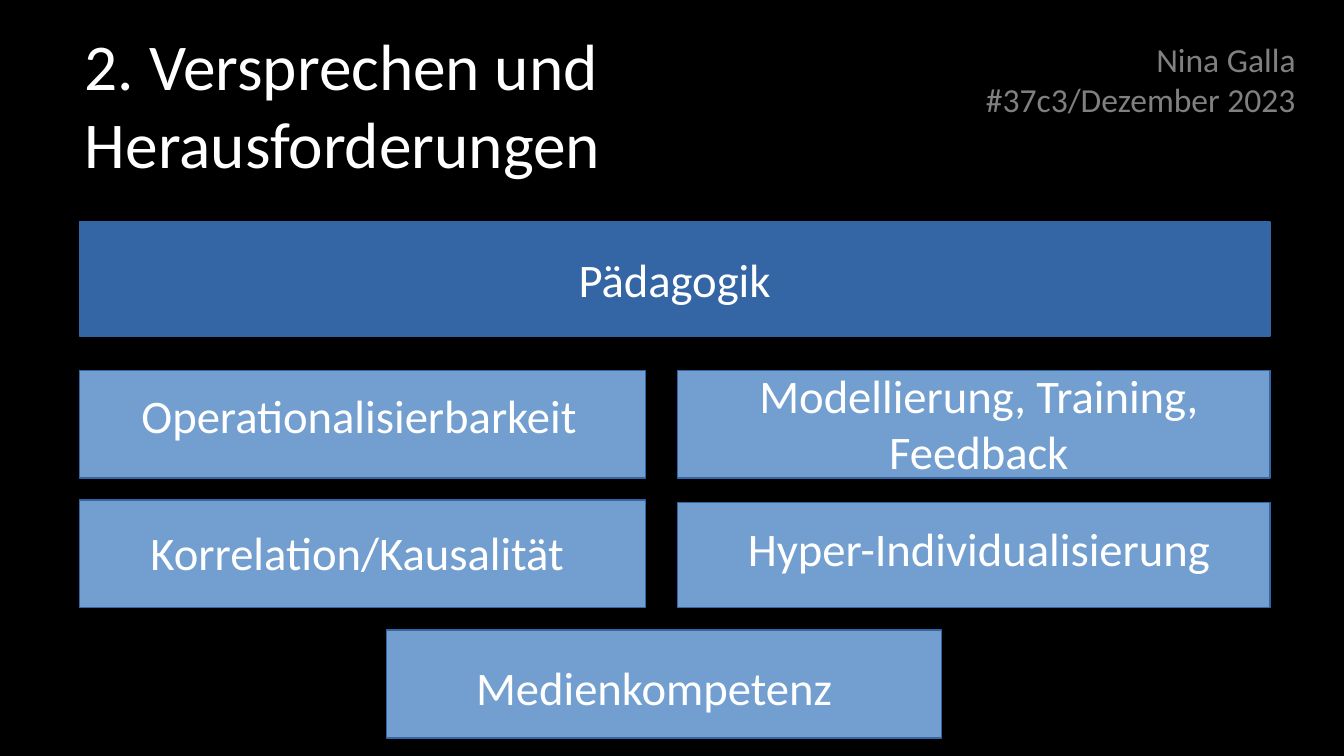
from pptx import Presentation
from pptx.dml.color import RGBColor
from pptx.enum import shapes, text
from pptx.util import Cm, Pt

COLORS = {
    "background": "000000",
    "text": "FFFFFF",
    "byline": "808080",
    "banner": "3465A4",
    "card": "729FCF",
    "outline": "3465A4",
}
FONT = "Calibri"
LABEL_SIZE = 25

TITLE = "2. Versprechen und\vHerausforderungen"
BYLINE = "Nina Galla\n#37c3/Dezember 2023"
BANNER = "Pädagogik"

# Lengths in cm: left, top, width, height
TITLE_AREA = (1.35, 0.43, 22.28, 3.05)
BYLINE_AREA = (12.04, 0.61, 12.7, 1.32)
LEFT, RIGHT_COLUMN, RIGHT_EDGE = 1.5, 12.8, 24
LEFT_WIDTH, RIGHT_WIDTH = 10.7, RIGHT_EDGE - RIGHT_COLUMN
CARD_HEIGHT = 2.04
ROW_TOPS = (7, 9.45, 11.91)
BANNER_AREA = (LEFT, 4.2, RIGHT_EDGE - LEFT, 2.15)

# Label, card area, label area
CARDS = [
    ("Operationalisierbarkeit",
     (LEFT, ROW_TOPS[0], LEFT_WIDTH, CARD_HEIGHT), (2.06, 7.19, 9.45, 2.62)),
    ("Modellierung, Training, Feedback",
     (RIGHT_COLUMN, ROW_TOPS[0], RIGHT_WIDTH, CARD_HEIGHT), (13, 6.81, 11, 1.8)),
    ("Korrelation/Kausalität",
     (LEFT, ROW_TOPS[1], LEFT_WIDTH, CARD_HEIGHT), (1.5, 9.78, 10.5, 1.8)),
    ("Hyper-Individualisierung",
     (RIGHT_COLUMN, 9.5, RIGHT_WIDTH, 1.98), (13, 9.7, 11, 1)),
    ("Medienkompetenz",
     (7.3, ROW_TOPS[2], 10.5, CARD_HEIGHT), (7.11, 12.32, 10.5, 1.8)),
]


def rgb(name):
    return RGBColor.from_string(COLORS[name])


def lengths(area):
    return [Cm(value) for value in area]


def write(box, words, size, align, color="text", anchor=text.MSO_ANCHOR.TOP):
    frame = box.text_frame
    frame.text = words
    frame.word_wrap = True
    frame.auto_size = text.MSO_AUTO_SIZE.NONE
    frame.vertical_anchor = anchor
    for para in frame.paragraphs:
        para.alignment = align
        for span in para.runs:
            span.font.name = FONT
            span.font.size = Pt(size)
            span.font.color.rgb = rgb(color)


def add_rectangle(page, area, fill):
    box = page.shapes.add_shape(shapes.MSO_SHAPE.RECTANGLE, *lengths(area))
    box.shadow.inherit = False
    box.fill.solid()
    box.fill.fore_color.rgb = rgb(fill)
    box.line.color.rgb = rgb("outline")
    box.line.width = Pt(0)
    return box


def main():
    deck = Presentation()
    deck.slide_width, deck.slide_height = Cm(25.4), Cm(14.29)
    page = deck.slides.add_slide(deck.slide_layouts.get_by_name("Title Only"))
    page.background.fill.solid()
    page.background.fill.fore_color.rgb = rgb("background")

    title = page.shapes.title
    title.left, title.top, title.width, title.height = lengths(TITLE_AREA)
    write(title, TITLE, 35, text.PP_ALIGN.LEFT, anchor=text.MSO_ANCHOR.MIDDLE)

    banner = add_rectangle(page, BANNER_AREA, "banner")
    write(banner, BANNER, LABEL_SIZE, text.PP_ALIGN.CENTER,
          anchor=text.MSO_ANCHOR.MIDDLE)

    for label, card_area, label_area in CARDS:
        add_rectangle(page, card_area, "card")
        box = page.shapes.add_textbox(*lengths(label_area))
        write(box, label, LABEL_SIZE, text.PP_ALIGN.CENTER)

    byline = page.shapes.add_textbox(*lengths(BYLINE_AREA))
    write(byline, BYLINE, 18, text.PP_ALIGN.RIGHT, color="byline")

    deck.save("out.pptx")


if __name__ == "__main__":
    main()
